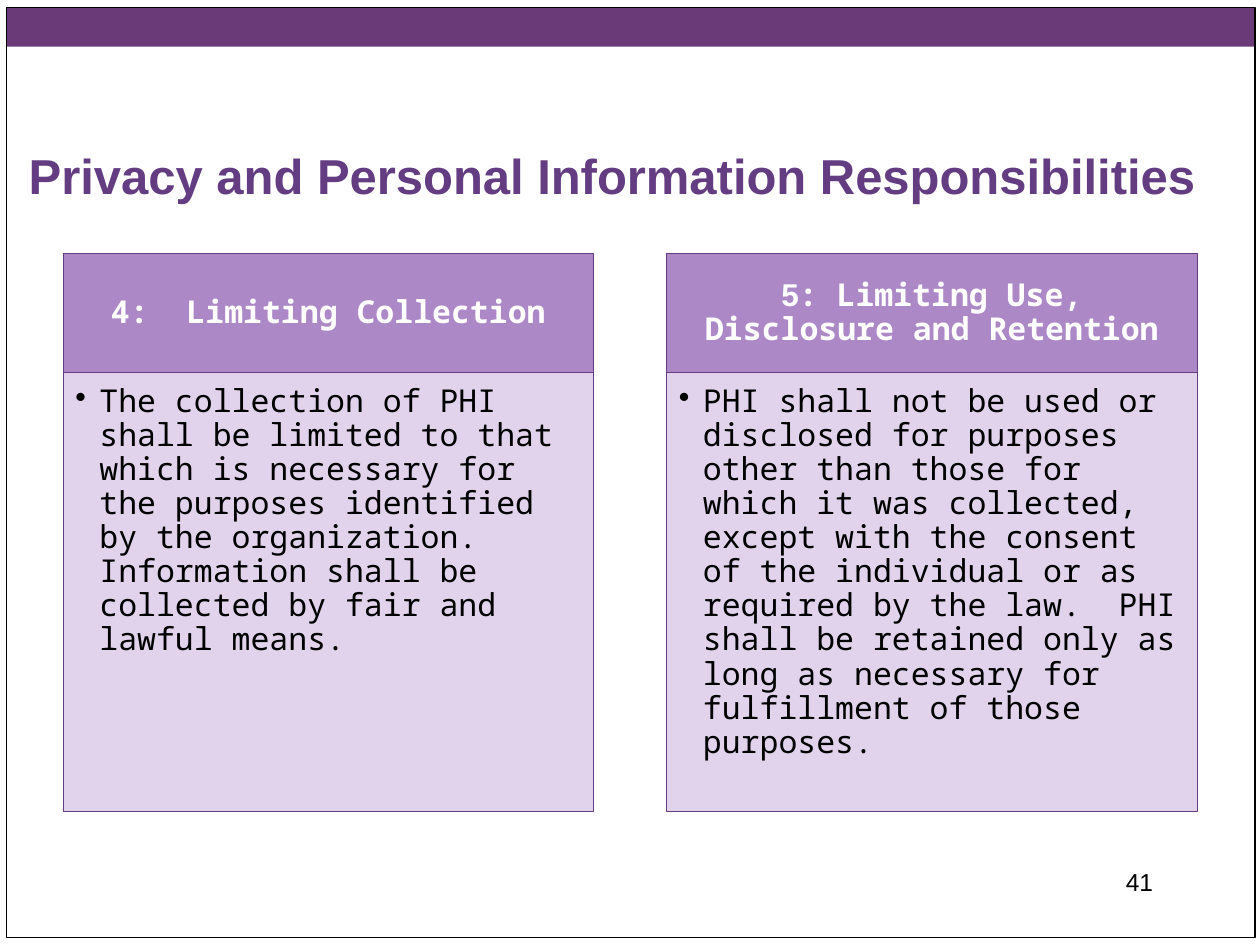
from lxml import etree
from pptx import Presentation
from pptx.dml.color import RGBColor
from pptx.enum.shapes import MSO_SHAPE
from pptx.enum.text import MSO_ANCHOR, PP_ALIGN
from pptx.oxml.ns import qn
from pptx.util import Inches, Pt

RECTANGLE = MSO_SHAPE.RECTANGLE
TOP, MIDDLE, BOTTOM = MSO_ANCHOR.TOP, MSO_ANCHOR.MIDDLE, MSO_ANCHOR.BOTTOM
LEFT, CENTER, RIGHT = PP_ALIGN.LEFT, PP_ALIGN.CENTER, PP_ALIGN.RIGHT

COLORS = {
    "bar": "693A77",
    "accent": "633C82",
    "header": "A37CC2",
    "body": "E0D3EB",
    "black": "000000",
    "white": "FFFFFF",
}
SANS, MONO = "Arial", "Noto Sans Mono"

TITLE = "Privacy and Personal Information Responsibilities"
PAGE_NUMBER = "41"
# Each header is a list of (text, font) pieces.
CARDS = [
    {
        "header": [("4:  Limiting Collection", MONO)],
        "body": "The collection of PHI shall be limited to that which is necessary for "
                "the purposes identified by the organization.  Information shall be "
                "collected by fair and lawful means.",
    },
    {
        "header": [("5", SANS), (": Limiting Use, Disclosure and Retention", MONO)],
        "body": "PHI shall not be used or disclosed for purposes other than those for "
                "which it was collected, except with the consent of the individual or as "
                "required by the law.  PHI shall be retained only as long as necessary "
                "for fulfillment of those purposes.",
    },
]
CARD_LEFT, CARD_TOP, CARD_WIDTH, CARD_STEP = 0.5, 2.01, 4.21, 4.79
HEADER_HEIGHT, BODY_HEIGHT = 0.95, 3.48
BULLET_INDENT = 0.19


def color(name):
    return RGBColor.from_string(COLORS[name])


def add_rectangle(slide, box, fill=None, line=None, line_width=0.5):
    shape = slide.shapes.add_shape(RECTANGLE, *map(Inches, box))
    shape.shadow.inherit = False
    if fill:
        shape.fill.solid()
        shape.fill.fore_color.rgb = color(fill)
    else:
        shape.fill.background()
    if line:
        shape.line.color.rgb = color(line)
        shape.line.width = Pt(line_width)
    else:
        shape.line.fill.background()
    return shape


def write(shape, pieces, size, text_color, bold=False, align=LEFT, anchor=TOP,
          insets=(0.1, 0.05, 0.1, 0.05)):
    frame = shape.text_frame
    frame.word_wrap = True
    frame.vertical_anchor = anchor
    (frame.margin_left, frame.margin_top,
     frame.margin_right, frame.margin_bottom) = map(Inches, insets)
    paragraph = frame.paragraphs[0]
    paragraph.alignment = align
    for text, font_name in pieces:
        run = paragraph.add_run()
        run.text = text
        run.font.name = font_name
        run.font.size = Pt(size)
        run.font.bold = bold
        run.font.color.rgb = color(text_color)
    return paragraph


def set_opacity(shape, percent):
    rgb = shape.fill._xPr.find(qn("a:solidFill"))[0]
    etree.SubElement(rgb, qn("a:alpha"), val=str(percent * 1000))


def add_bullet(paragraph):
    properties = paragraph._p.get_or_add_pPr()
    properties.set("marL", str(Inches(BULLET_INDENT)))
    properties.set("indent", str(-Inches(BULLET_INDENT)))
    etree.SubElement(properties, qn("a:buChar"), char="•")


def add_card(slide, left, card):
    header = add_rectangle(slide, (left, CARD_TOP, CARD_WIDTH, HEADER_HEIGHT),
                           "header", "accent")
    set_opacity(header, 90)
    heading = write(header, card["header"], 18, "white", True, CENTER, MIDDLE,
                    (0.14, 0.08, 0.14, 0.08))
    heading.line_spacing = 0.9

    body = add_rectangle(slide, (left, CARD_TOP + HEADER_HEIGHT, CARD_WIDTH, BODY_HEIGHT),
                         "body", "accent")
    paragraph = write(body, [(card["body"], MONO)], 18, "black",
                      insets=(0.1, 0.1, 0.14, 0.16))
    paragraph.line_spacing = 0.9
    add_bullet(paragraph)


def main():
    presentation = Presentation()
    presentation.slide_width, presentation.slide_height = Inches(10), Inches(7.5)
    slide = presentation.slides.add_slide(presentation.slide_layouts[6])

    add_rectangle(slide, (0.05, 0.06, 9.91, 0.31), "bar")
    add_rectangle(slide, (0.05, 0.06, 9.91, 7.38), line="black", line_width=0.75)

    title = slide.shapes.add_textbox(*map(Inches, (0.13, 0.67, 9.87, 1)))
    write(title, [(TITLE, SANS)], 28, "accent", bold=True, anchor=BOTTOM)

    for index, card in enumerate(CARDS):
        add_card(slide, CARD_LEFT + index * CARD_STEP, card)

    number = slide.shapes.add_textbox(*map(Inches, (7.17, 6.83, 2.08, 0.5)))
    write(number, [(PAGE_NUMBER, SANS)], 14, "black", align=RIGHT)

    presentation.save("out.pptx")


if __name__ == "__main__":
    main()
